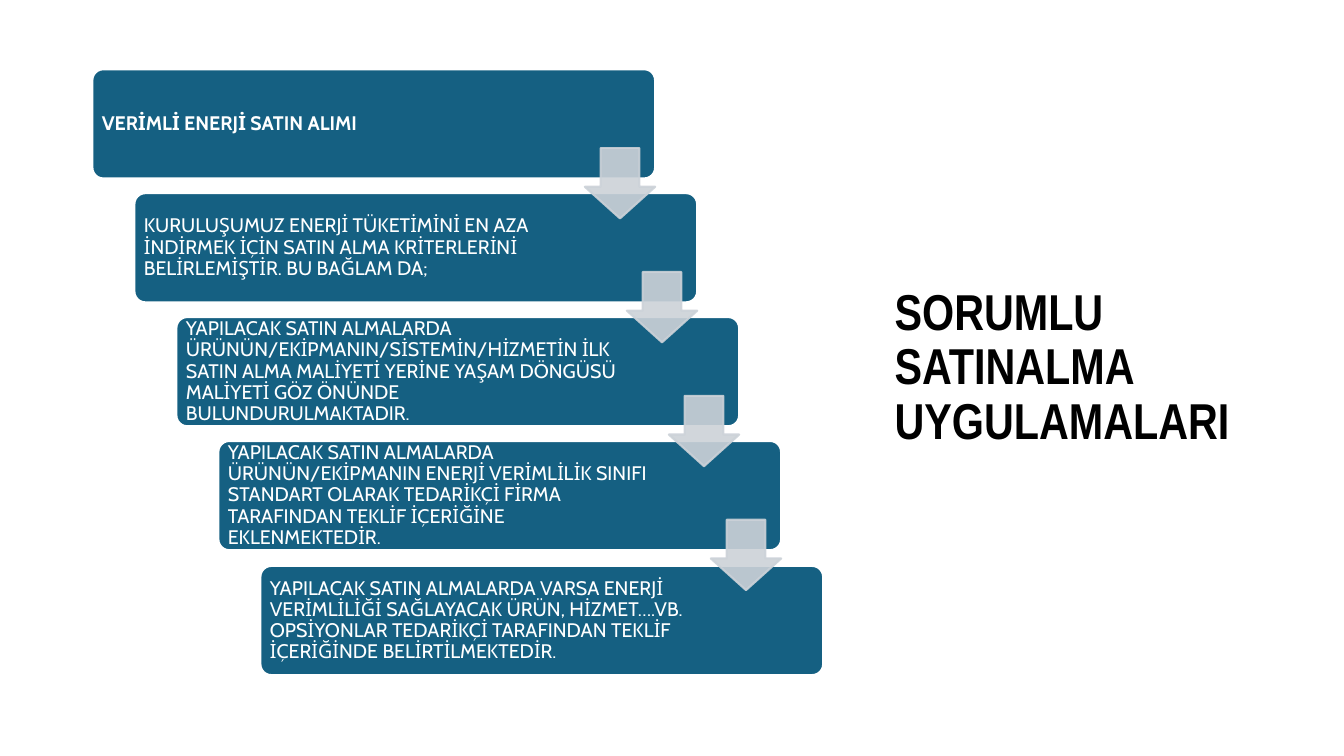
"""Build the responsible purchasing slide: a staircase of five steps and a title."""
from lxml.etree import SubElement
from pptx import Presentation
from pptx.dml.color import RGBColor
from pptx.enum.shapes import MSO_SHAPE
from pptx.enum.text import MSO_ANCHOR, MSO_AUTO_SIZE, PP_ALIGN
from pptx.oxml.ns import qn
from pptx.util import Pt

PX = 9525
COLORS = {"step": "156082", "arrow": "CCD2D8", "white": "FFFFFF", "title": "000000"}
STEPS = [
    "VERİMLİ ENERJİ SATIN ALIMI",
    "KURULUŞUMUZ ENERJİ TÜKETİMİNİ EN AZA İNDİRMEK İÇİN SATIN ALMA "
    "KRİTERLERİNİ BELİRLEMİŞTİR. BU BAĞLAM DA;",
    "YAPILACAK SATIN ALMALARDA ÜRÜNÜN/EKİPMANIN/SİSTEMİN/HİZMETİN İLK SATIN ALMA "
    "MALİYETİ YERİNE YAŞAM DÖNGÜSÜ MALİYETİ GÖZ ÖNÜNDE BULUNDURULMAKTADIR.",
    "YAPILACAK SATIN ALMALARDA ÜRÜNÜN/EKİPMANIN ENERJİ VERİMLİLİK SINIFI STANDART "
    "OLARAK TEDARİKÇİ FİRMA TARAFINDAN TEKLİF İÇERİĞİNE EKLENMEKTEDİR.",
    "YAPILACAK SATIN ALMALARDA VARSA ENERJİ VERİMLİLİĞİ SAĞLAYACAK ÜRÜN, HİZMET….VB. "
    "OPSİYONLAR TEDARİKÇİ TARAFINDAN TEKLİF İÇERİĞİNDE BELİRTİLMEKTEDİR.",
]
LEFT, TOP, WIDTH, HEIGHT = 88, 66, 536, 104
STEP_RIGHT, STAIR_DROP = 40, 473
ARROW_RIGHT, ARROW_DOWN, ARROW_SIZE = 469, 75, 67


def add_block(kind, place, adjustments, fill, line):
    block = page.shapes.add_shape(kind, *[value * PX for value in place])
    block.shadow.inherit = False
    for index, value in enumerate(adjustments):
        block.adjustments[index] = value
    block.fill.solid()
    block.fill.fore_color.rgb = RGBColor.from_string(COLORS[fill])
    block.line.color.rgb = RGBColor.from_string(COLORS[line])
    block.line.width = Pt(1.5)
    return block


def write(frame, text, color, inset, font):
    margins = {f"margin_{side}": inset * PX for side in ("left", "right", "top", "bottom")}
    settings = {"word_wrap": True, "auto_size": MSO_AUTO_SIZE.NONE,
                "vertical_anchor": MSO_ANCHOR.MIDDLE, **margins}
    for name, value in settings.items():
        setattr(frame, name, value)
    para = frame.paragraphs[0]
    para.alignment = PP_ALIGN.LEFT
    para.line_spacing = 0.9
    span = para.add_run()
    span.text = text
    span.font.color.rgb = RGBColor.from_string(COLORS[color])
    for name, value in font.items():
        setattr(span.font, name, value)


deck = Presentation()
deck.slide_width, deck.slide_height = 1280 * PX, 720 * PX
page = deck.slides.add_slide(deck.slide_layouts[5])

title = page.shapes.title
for name, value in {"left": 842, "top": 58, "width": 350, "height": 586}.items():
    setattr(title, name, value * PX)
write(title.text_frame, "SORUMLU SATINALMA UYGULAMALARI", "title", 10,
      {"name": "Arial Narrow", "size": Pt(36), "bold": True})

corners = [(LEFT + STEP_RIGHT * index, TOP + STAIR_DROP * index // (len(STEPS) - 1))
           for index in range(len(STEPS))]

for index, (text, (left, top)) in enumerate(zip(STEPS, corners)):
    add_block(MSO_SHAPE.ROUNDED_RECTANGLE, (left, top, WIDTH, HEIGHT), [0.1], "step", "white")
    text_width = 422 if index else 412
    box = page.shapes.add_textbox(
        *[value * PX for value in (left + 3, top + 3, text_width, HEIGHT - 6)])
    write(box.text_frame, text, "white", 6,
          {"name": "Cabin", "size": Pt(14), "bold": index == 0})

for left, top in corners[:-1]:
    place = (left + ARROW_RIGHT, top + ARROW_DOWN, ARROW_SIZE, ARROW_SIZE)
    arrow = add_block(MSO_SHAPE.DOWN_ARROW, place, [0.55, 0.45], "arrow", "arrow")
    for color in arrow.element.spPr.iter(qn("a:srgbClr")):
        SubElement(color, qn("a:alpha"), val="90000")

deck.save("out.pptx")
